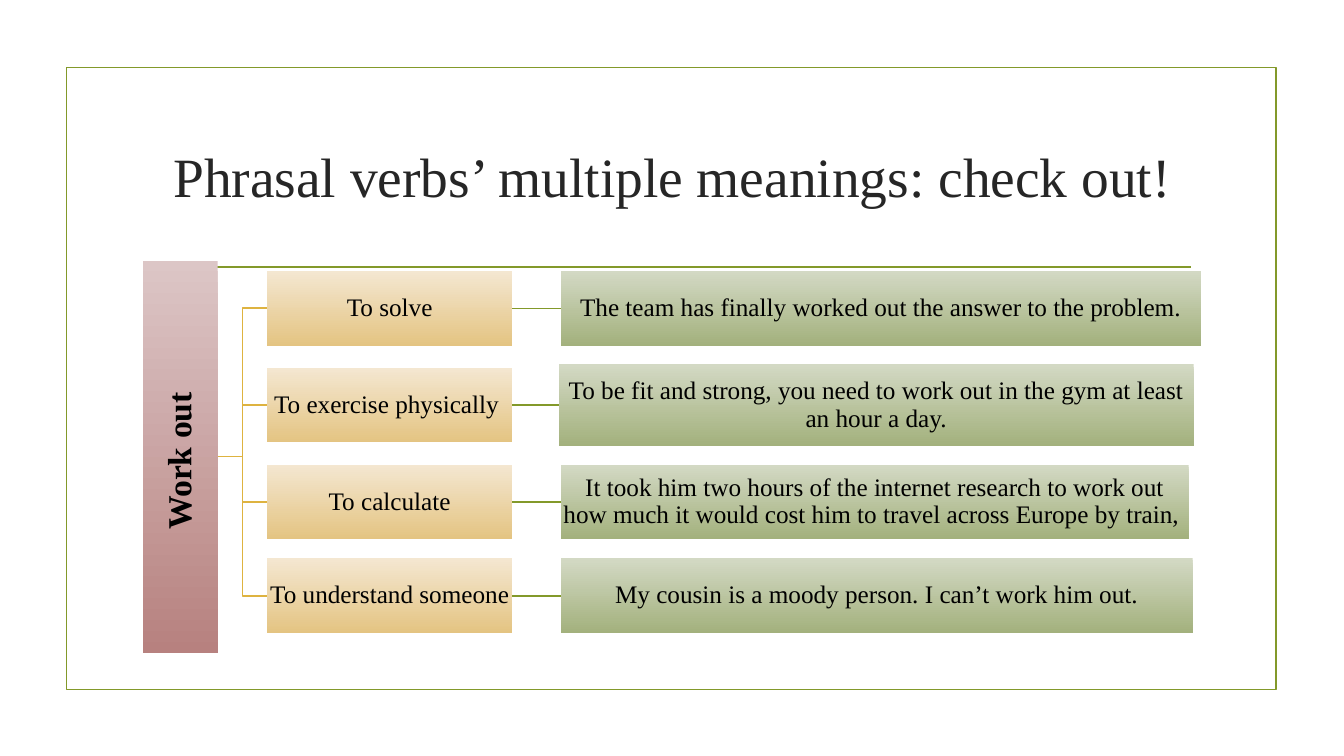
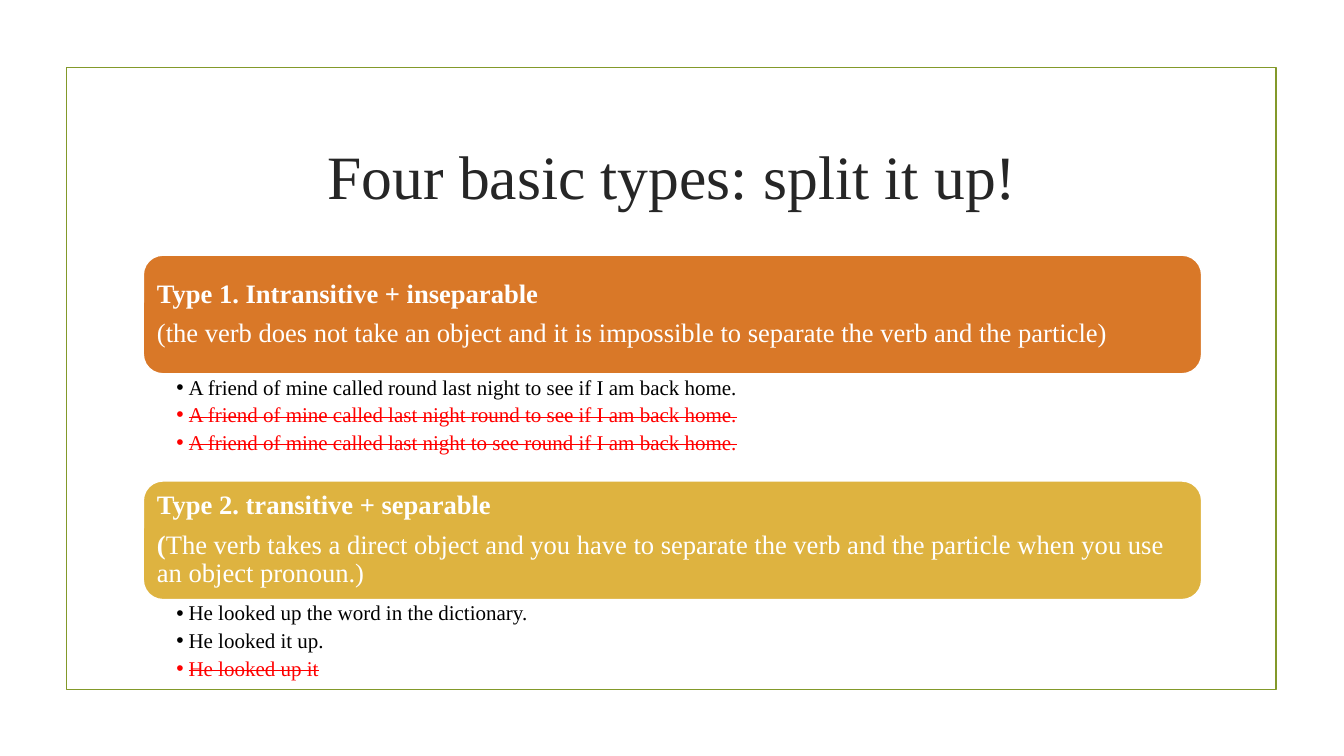
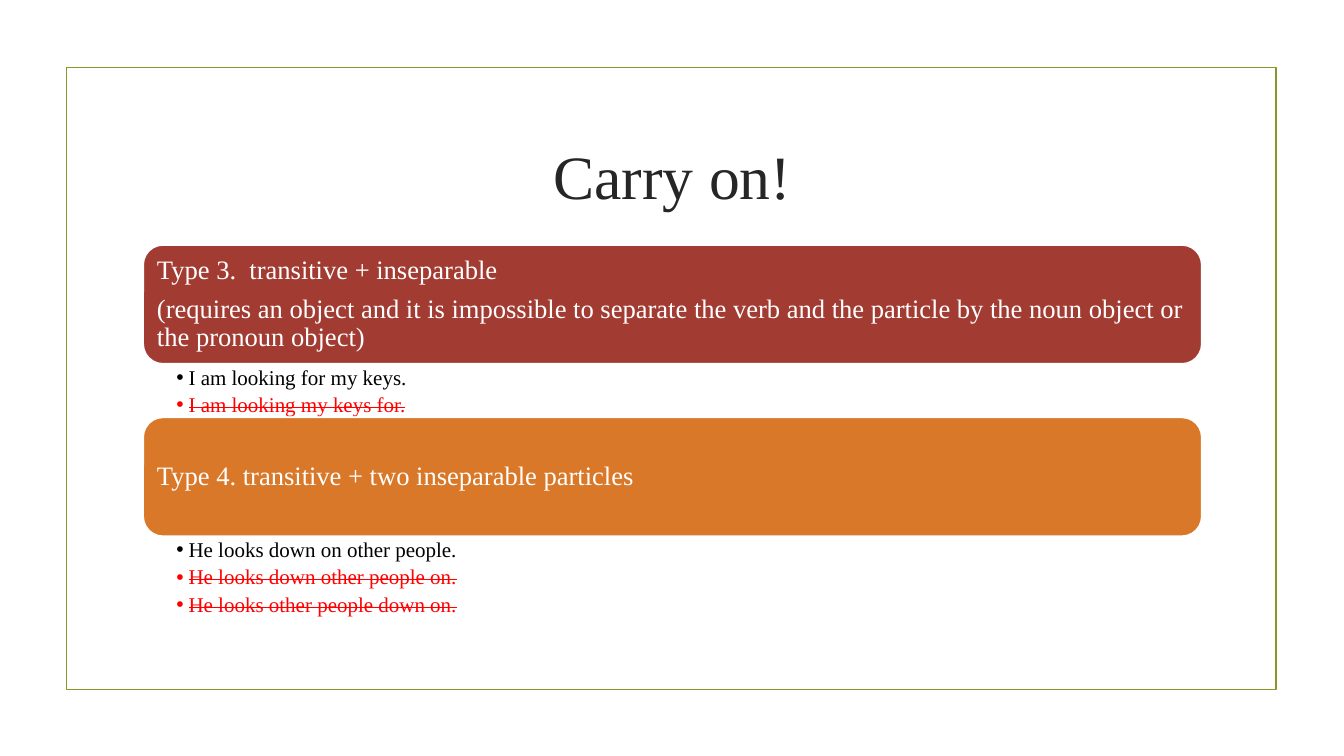
"""Build three slides on phrasal verbs: their meanings and their four types."""
from lxml import etree
from pptx import Presentation
from pptx.dml.color import RGBColor
from pptx.enum.shapes import MSO_CONNECTOR, MSO_SHAPE
from pptx.enum.text import MSO_ANCHOR, MSO_AUTO_SIZE, PP_ALIGN
from pptx.oxml.ns import qn
from pptx.util import Inches, Pt

RECTANGLE = MSO_SHAPE.RECTANGLE
ROUNDED = MSO_SHAPE.ROUNDED_RECTANGLE
STRAIGHT = MSO_CONNECTOR.STRAIGHT
ELBOW = MSO_CONNECTOR.ELBOW
CENTER = PP_ALIGN.CENTER
LEFT = PP_ALIGN.LEFT
MIDDLE = MSO_ANCHOR.MIDDLE
TOP = MSO_ANCHOR.TOP
NO_AUTOFIT = MSO_AUTO_SIZE.NONE

FONT = "Times New Roman"
WHITE = RGBColor(0xFF, 0xFF, 0xFF)
BLACK = RGBColor(0x00, 0x00, 0x00)
INK = RGBColor(0x26, 0x26, 0x26)
RED = RGBColor(0xFF, 0x00, 0x00)
GREEN = RGBColor(0x83, 0x99, 0x2A)
GOLD = RGBColor(0xDE, 0xB3, 0x40)
ORANGE = RGBColor(0xD9, 0x78, 0x28)
BRICK = RGBColor(0xA2, 0x3C, 0x33)
ROSE_GRADIENT = (RGBColor(0xDC, 0xC6, 0xC6), RGBColor(0xB7, 0x81, 0x7F))
SAND_GRADIENT = (RGBColor(0xF4, 0xE7, 0xD1), RGBColor(0xE4, 0xC4, 0x82))
SAGE_GRADIENT = (RGBColor(0xD3, 0xD9, 0xC4), RGBColor(0xA3, 0xB1, 0x7D))

LINE_WIDTH = Pt(1.25)
CONTENT_LEFT, CONTENT_WIDTH = 1.42, 10.5


def write_text(shape, paragraphs, size, align, anchor, insets, space_after=0):
    """Fill a shape with paragraphs, each a list of (text, colour, bold, struck) runs."""
    frame = shape.text_frame
    frame.word_wrap = True
    frame.auto_size = NO_AUTOFIT
    frame.vertical_anchor = anchor
    (frame.margin_left, frame.margin_top,
     frame.margin_right, frame.margin_bottom) = [Inches(inset) for inset in insets]
    for index, runs in enumerate(paragraphs):
        paragraph = frame.paragraphs[0] if index == 0 else frame.add_paragraph()
        paragraph.alignment = align
        paragraph.line_spacing = 0.9
        paragraph.space_before = Pt(0)
        paragraph.space_after = Pt(space_after)
        for text, color, bold, struck in runs:
            run = paragraph.add_run()
            run.text = text
            run.font.name = FONT
            run.font.size = Pt(size)
            run.font.bold = bold
            run.font.color.rgb = color
            if struck:
                run.font._element.set("strike", "sngStrike")


def add_line(slide, kind, color, start, end):
    """Draw a line between two points or two (shape, site) joints."""
    connector = slide.shapes.add_connector(kind, 0, 0, 0, 0)
    if isinstance(start[1], int) and not isinstance(start[0], int):
        connector.begin_connect(*start)
        connector.end_connect(*end)
    else:
        connector.begin_x, connector.begin_y = start
        connector.end_x, connector.end_y = end
    connector.line.color.rgb = color
    connector.line.width = LINE_WIDTH
    etree.SubElement(connector.element.spPr, qn("a:effectLst"))


presentation = Presentation()
presentation.slide_width = Inches(13.33)
presentation.slide_height = Inches(7.5)
two_content_layout = presentation.slide_layouts[3]
title_layout = presentation.slide_layouts[5]

slides = []
for title, title_size, layout in [
    ("Phrasal verbs’ multiple meanings: check out!", 39.6, title_layout),
    ("Four basic types: split it up!", 44, two_content_layout),
    ("Carry on!", 44, two_content_layout),
]:
    slide = presentation.slides.add_slide(layout)
    border = slide.shapes.add_shape(
        RECTANGLE, Inches(0.66), Inches(0.67), Inches(12), Inches(6.17))
    border.shadow.inherit = False
    border.fill.background()
    border.line.color.rgb = GREEN
    border.line.width = LINE_WIDTH
    heading = slide.shapes.title
    heading.left, heading.top = Inches(CONTENT_LEFT), Inches(1.07)
    heading.width, heading.height = Inches(CONTENT_WIDTH), Inches(1.43)
    write_text(heading, [[(title, INK, False, False)]], title_size, CENTER, MIDDLE,
               (0.1, 0.05, 0.1, 0.05))
    slides.append(slide)

meanings_slide = slides[0]
rule_y = Inches(2.65)
rule = meanings_slide.shapes.add_connector(
    STRAIGHT, Inches(1.53), rule_y, Inches(11.81), rule_y)
rule.line.color.rgb = GREEN
rule.line.width = LINE_WIDTH
etree.SubElement(rule.element.spPr, qn("a:effectLst"))

boxes = [("Work out ", 24, True, ROSE_GRADIENT, 0.02, 1.42, 4.53, 0.74, 3.89)]
for meaning, example, center_y, left, width, height in [
    ("To solve", "The team has finally worked out the answer to the problem.",
     3.06, 5.56, 6.35, 0.74),
    ("To exercise physically ",
     "To be fit and strong, you need to work out in the gym at least an hour a day.",
     4.02, 5.54, 6.3, 0.81),
    ("To calculate",
     "It took him two hours of the internet research to work out how much it would "
     "cost him to travel across Europe by train, ",
     4.98, 5.56, 6.23, 0.74),
    ("To understand someone ", "My cousin is a moody person. I can’t work him out.",
     5.91, 5.56, 6.27, 0.74),
]:
    boxes.append((meaning, 18, False, SAND_GRADIENT, 0.01, 2.65, center_y, 2.43, 0.74))
    boxes.append((example, 18, False, SAGE_GRADIENT, 0.01, left, center_y, width, height))

box_shapes = []
for text, size, bold, gradient, inset, left, center_y, width, height in boxes:
    box = meanings_slide.shapes.add_shape(
        RECTANGLE, Inches(left), Inches(center_y - height / 2),
        Inches(width), Inches(height))
    box.shadow.inherit = False
    box.line.fill.background()
    box.fill.gradient()
    box.fill.gradient_angle = 270
    for stop, color in zip(box.fill.gradient_stops, gradient):
        stop.color.rgb = color
    write_text(box, [[(text, BLACK, bold, False)]], size, CENTER, MIDDLE, [inset] * 4)
    box_shapes.append(box)

verb_box = box_shapes[0]
verb_box.text_frame._txBody.bodyPr.set("vert", "vert270")
for meaning_box, example_box in zip(box_shapes[1::2], box_shapes[2::2]):
    add_line(meanings_slide, ELBOW, GOLD, (verb_box, 3), (meaning_box, 1))
    add_line(meanings_slide, STRAIGHT, GREEN, (meaning_box, 3), (example_box, 1))

CARD_HEIGHT = 1.18
for slide, position, top, color, list_height, card_text, examples in [
    (slides[1], 1, 2.53, ORANGE, 1.05,
     [[("Type 1. Intransitive + inseparable", True)],
      [("(the verb does not take an object and it is impossible to separate the verb "
        "and the particle)", False)]],
     [("A friend of mine called round last night to see if I am back home.", True),
      ("A friend of mine called last night round to see if I am back home.", False),
      ("A friend of mine called last night to see round if I am back home.", False)]),
    (slides[1], 2, 4.77, GOLD, 0.8,
     [[("Type 2. transitive + separable", True)],
      [("(", True),
       ("The verb takes a direct object and you have to separate the verb and the "
        "particle when you use an object pronoun.)", False)]],
     [("He looked up the word in the dictionary.", True),
      ("He looked it up.", True),
      ("He looked up it", False)]),
    (slides[2], 1, 2.43, BRICK, 0.53,
     [[("Type 3.  transitive + inseparable", False)],
      [("(requires an object and it is impossible to separate the verb and the "
        "particle by the noun object or the pronoun object)", False)]],
     [("I am looking for my keys.", True),
      ("I am looking my keys for.", False)]),
    (slides[2], 2, 4.14, ORANGE, 1.05,
     [[("Type 4. transitive + two inseparable particles", False)]],
     [("He looks down on other people.", True),
      ("He looks down other people on.", False),
      ("He looks other people down on.", False)]),
]:
    card = slide.shapes.add_shape(
        ROUNDED, Inches(CONTENT_LEFT), Inches(top),
        Inches(CONTENT_WIDTH), Inches(CARD_HEIGHT))
    card.shadow.inherit = False
    card.fill.solid()
    card.fill.fore_color.rgb = color
    card.line.color.rgb = WHITE
    card.line.width = LINE_WIDTH
    card_runs = [[(text, WHITE, bold, False) for text, bold in runs] for runs in card_text]
    write_text(card, card_runs, 19, LEFT, MIDDLE, [0.08] * 4, 7.4)

    example_list = slide.placeholders[position]
    example_list.left, example_list.top = Inches(CONTENT_LEFT), Inches(top + CARD_HEIGHT)
    example_list.width, example_list.height = Inches(CONTENT_WIDTH), Inches(list_height)
    example_runs = [[(text, BLACK if correct else RED, False, not correct)]
                    for text, correct in examples]
    write_text(example_list, example_runs, 15, LEFT, TOP, (0.33, 0.03, 0.15, 0.03), 3.5)
    for paragraph in example_list.text_frame.paragraphs:
        paragraph.level = 1
        properties = paragraph._p.get_or_add_pPr()
        properties.set("marL", str(Inches(0.12)))
        properties.set("indent", str(-Inches(0.12)))
        etree.SubElement(properties, qn("a:buChar")).set("char", "•")

presentation.save("out.pptx")
